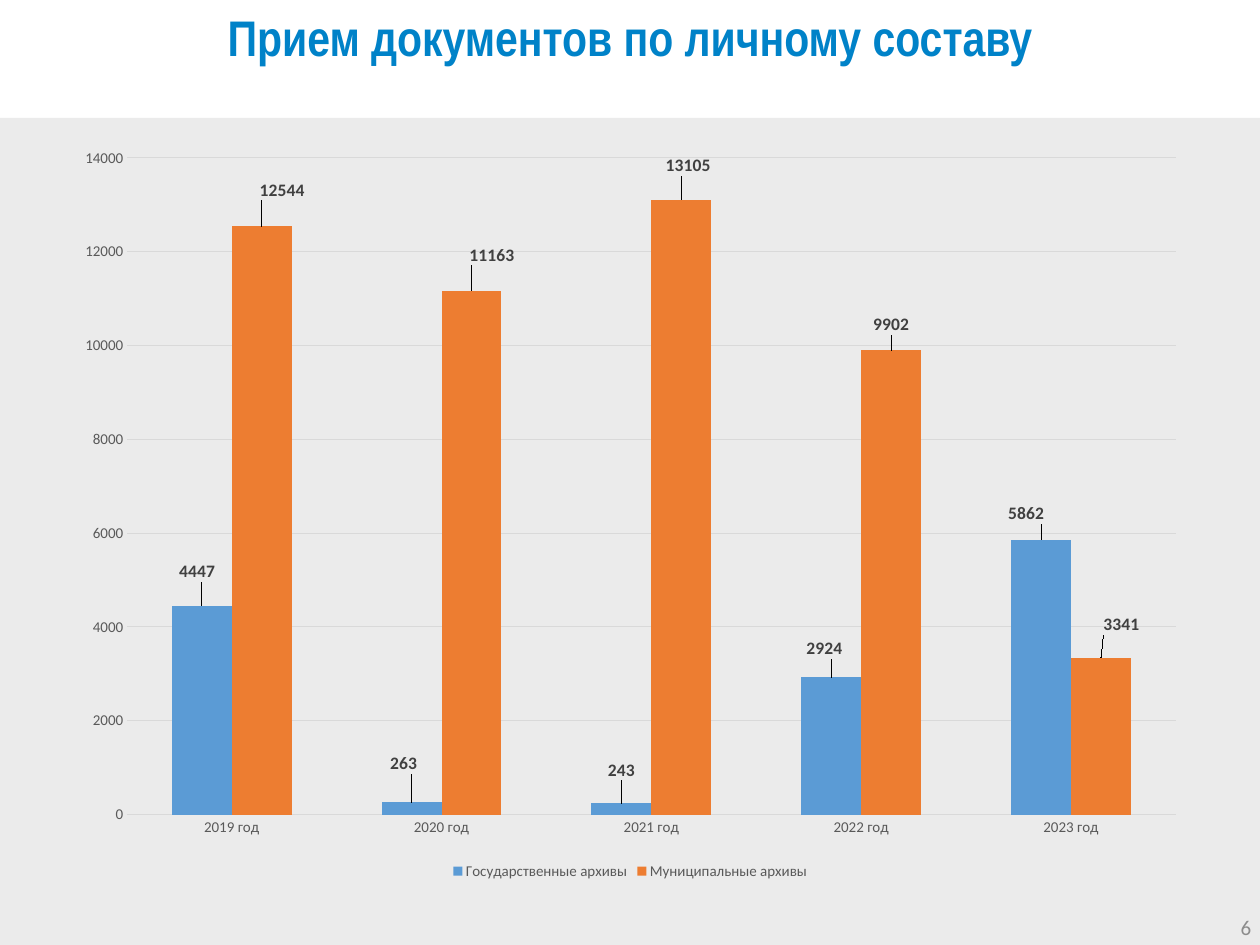
from dataclasses import dataclass
from lxml import etree
from pptx import Presentation
from pptx.chart.data import CategoryChartData as Data
from pptx.dml.color import RGBColor as Rgb
from pptx.enum.chart import XL_CHART_TYPE as Kind
from pptx.enum.chart import XL_LABEL_POSITION as Spot
from pptx.enum.chart import XL_LEGEND_POSITION as Side
from pptx.enum.chart import XL_TICK_MARK as Tick
from pptx.enum.shapes import MSO_SHAPE as Form
from pptx.enum.text import MSO_ANCHOR as Anchor
from pptx.enum.text import PP_ALIGN as Align
from pptx.oxml.ns import qn
from pptx.util import Cm, Pt


@dataclass(frozen=True)
class Theme:
    head: str = "Arial Narrow"
    body: str = "Calibri"
    blue: str = "0082C8"
    white: str = "FFFFFF"
    panel: str = "EBEBEB"
    grid: str = "D9D9D9"
    axis: str = "595959"
    label: str = "404040"
    page: str = "8C8C8C"
    bars: tuple = ("5B9BD5", "ED7D31")
    big: float = 40
    num: float = 16.8
    mid: float = 14
    small: float = 12


LOOK = Theme()
WIDE, HIGH = 35.56, 26.67
YEARS = [f"{year} год" for year in range(2019, 2024)]
ROWS = {
    "Государственные архивы": (4447, 263, 243, 2924, 5862),
    "Муниципальные архивы": (12544, 11163, 13105, 9902, 3341),
}
SHIFTS = (
    ((-0.4, -2.7), (-0.7, -3.3), (0, -2.5), (-0.6, -1.9), (-1.3, -1.6)),
    ((1.8, -2.9), (1.8, -2.9), (0.6, -2.7), (0, -1.5), (1.8, -2.5)),
)


def style(font, size, color, name=LOOK.body, bold=False):
    font.size, font.name, font.bold = Pt(size), name, bold
    font.color.rgb = Rgb.from_string(color)


def place(shape, left, top, width, height):
    shape.left, shape.top = Cm(left), Cm(top)
    shape.width, shape.height = Cm(width), Cm(height)


def add_band(slide, top, height, color):
    band = slide.shapes.add_shape(Form.RECTANGLE, 0, Cm(top), Cm(WIDE), Cm(height))
    band.shadow.inherit = False
    band.fill.solid()
    band.fill.fore_color.rgb = Rgb.from_string(color)
    band.line.fill.background()


def write(shape, text, align, anchor, **look):
    frame = shape.text_frame
    frame.word_wrap = True
    frame.vertical_anchor = anchor
    frame.text = text
    para = frame.paragraphs[0]
    para.alignment = align
    style(para.runs[0].font, **look)


def set_title(slide, text):
    title = slide.shapes.title
    place(title, 0, 0.05, WIDE, 1.96)
    write(title, text, Align.CENTER, Anchor.TOP,
          size=LOOK.big, color=LOOK.blue, name=LOOK.head, bold=True)
    title.text_frame.paragraphs[0].line_spacing = 1.0
    slide.shapes.element.append(title.element)


def add_page(slide, text):
    box = slide.shapes.add_textbox(Cm(27.56), Cm(25.45), Cm(8), Cm(1.42))
    write(box, text, Align.RIGHT, Anchor.MIDDLE, size=LOOK.num, color=LOOK.page)


def make_layout(**parts):
    layout = etree.Element(qn("c:layout"))
    manual = etree.SubElement(layout, qn("c:manualLayout"))
    for name, value in parts.items():
        etree.SubElement(manual, qn(f"c:{name}")).set("val", str(value))
    return layout


def set_plot(chart):
    area = chart.element.find(".//" + qn("c:plotArea"))
    for old in area.findall(qn("c:layout")):
        area.remove(old)
    area.insert(0, make_layout(layoutTarget="inner", xMode="edge", yMode="edge",
                               x=0.057, y=0.032, w=0.923, h=0.876))


def set_axes(chart):
    for axis in (chart.category_axis, chart.value_axis):
        axis.major_tick_mark = axis.minor_tick_mark = Tick.NONE
        axis.format.line.fill.background()
        style(axis.tick_labels.font, LOOK.small, LOOK.axis)
    scale = chart.value_axis
    scale.minimum_scale, scale.maximum_scale, scale.major_unit = 0, 14000, 2000
    grid = scale.major_gridlines.format.line
    grid.width = Pt(0.75)
    grid.color.rgb = Rgb.from_string(LOOK.grid)
    base = chart.category_axis.format.line
    base.width = Pt(0.75)
    base.color.rgb = Rgb.from_string(LOOK.grid)


def set_bars(bars, color, shifts):
    bars.format.fill.solid()
    bars.format.fill.fore_color.rgb = Rgb.from_string(color)
    bars.invert_if_negative = False
    bars.data_labels.show_value = True
    style(bars.data_labels.font, LOOK.mid, LOOK.label, bold=True)
    for index in range(len(shifts)):
        label = bars.points[index].data_label
        style(label.font, LOOK.mid, LOOK.label, bold=True)
        label.position = Spot.OUTSIDE_END
    marks = bars.data_labels._element.findall(qn("c:dLbl"))
    for mark, (right, down) in zip(marks, shifts):
        mark.insert(1, make_layout(x=round(right / 100, 3), y=round(down / 100, 3)))


def add_bars(slide):
    data = Data()
    data.categories = YEARS
    for name, values in ROWS.items():
        data.add_series(name, values)
    frame = slide.shapes.add_chart(Kind.COLUMN_CLUSTERED, Cm(1.75), Cm(3.78),
                                   Cm(32.08), Cm(21.16), data)
    chart = frame.chart
    chart.has_title = False
    chart.font.name = LOOK.body
    chart.has_legend = True
    chart.legend.position = Side.BOTTOM
    chart.legend.include_in_layout = False
    style(chart.legend.font, LOOK.small, LOOK.axis)
    plot = chart.plots[0]
    plot.gap_width, plot.overlap = 150, 0
    plot.vary_by_categories = False
    set_axes(chart)
    set_plot(chart)
    for bars, color, shifts in zip(plot.series, LOOK.bars, SHIFTS):
        set_bars(bars, color, shifts)


def main():
    deck = Presentation()
    deck.slide_width, deck.slide_height = Cm(WIDE), Cm(HIGH)
    slide = deck.slides.add_slide(deck.slide_layouts[5])
    add_band(slide, 0, 2.54, LOOK.white)
    add_band(slide, 3.33, HIGH - 3.33, LOOK.panel)
    set_title(slide, "Прием документов по личному составу")
    add_page(slide, "6")
    add_bars(slide)
    deck.save("out.pptx")


if __name__ == "__main__":
    main()
